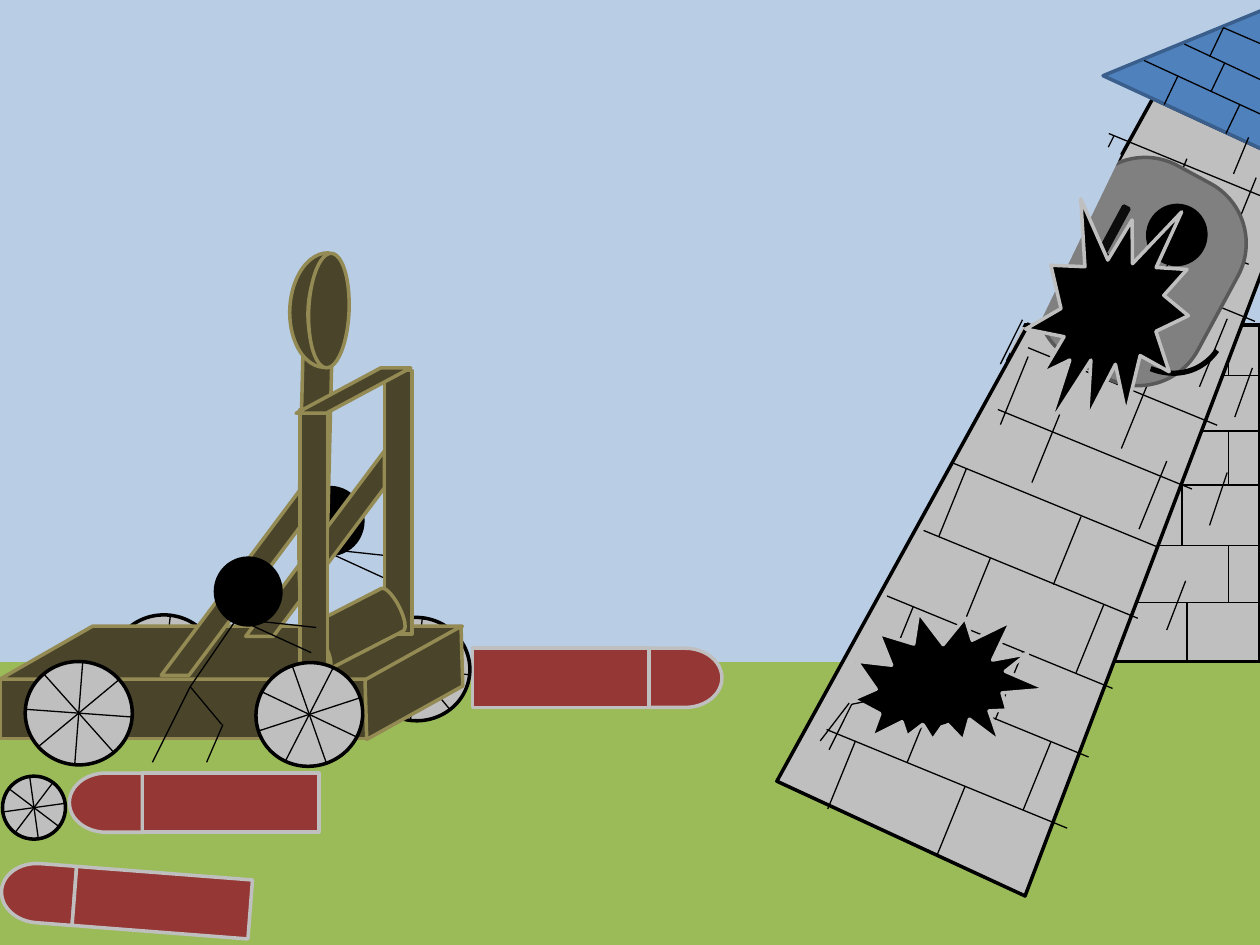
import math
from dataclasses import dataclass

import pptx
import pptx.dml.color
import pptx.enum.shapes
import pptx.oxml
import pptx.slide
import pptx.util
from pptx.util import Inches

Kind = pptx.enum.shapes.MSO_SHAPE
RGB = pptx.dml.color.RGBColor

BLACK = RGB(0x00, 0x00, 0x00)
INK = RGB(0x0D, 0x0D, 0x0D)
GRASS = RGB(0x9B, 0xBB, 0x59)
SKY = RGB(0xB9, 0xCD, 0xE5)
STONE = RGB(0xBF, 0xBF, 0xBF)
WOOD = RGB(0x4A, 0x45, 0x2A)
WOOD_EDGE = RGB(0x94, 0x8A, 0x54)
ROCKET_RED = RGB(0x95, 0x37, 0x35)
ROOF = RGB(0x4F, 0x81, 0xBD)
ROOF_EDGE = RGB(0x3A, 0x5F, 0x8C)
BOULDER = RGB(0x80, 0x80, 0x80)
BOULDER_EDGE = RGB(0x59, 0x59, 0x59)

COURSE_SLOPE = 0.41
BRICK_JOINT = (-0.22, 0.54)
TILE_JOINT = (-0.11, 0.23)


@dataclass(frozen=True)
class Box:
    left: float
    top: float
    width: float
    height: float
    angle: float = 0


def draw(slide: pptx.slide.Slide, kind: Kind, box: Box, fill: RGB | None, edge: RGB,
         adjust: tuple[float, ...] = (), weight: float = 2) -> None:
    part = slide.shapes.add_shape(kind, Inches(box.left), Inches(box.top),
                                  Inches(box.width), Inches(box.height))
    part.rotation = box.angle
    part.shadow.inherit = False
    if fill is None:
        part.fill.background()
    else:
        part.fill.solid()
        part.fill.fore_color.rgb = fill
    part.line.color.rgb = edge
    part.line.width = pptx.util.Pt(weight)
    for index, value in enumerate(adjust):
        part.adjustments[index] = value


def wood(slide: pptx.slide.Slide, kind: Kind, box: Box, *adjust: float) -> None:
    draw(slide, kind, box, WOOD, WOOD_EDGE, adjust)


def stroke(slide: pptx.slide.Slide, x1: float, y1: float, x2: float, y2: float) -> None:
    line = slide.shapes.add_connector(pptx.enum.shapes.MSO_CONNECTOR.STRAIGHT,
                                      Inches(x1), Inches(y1), Inches(x2), Inches(y2))
    line.line.color.rgb = BLACK
    line.line.width = pptx.util.Pt(0.75)
    properties = line._element.spPr
    properties.append(pptx.oxml.parse_xml(
        '<a:effectLst xmlns:a="http://schemas.openxmlformats.org/drawingml/2006/main"/>'))


def strokes(slide: pptx.slide.Slide, ends: list[tuple[float, float, float, float]]) -> None:
    for end in ends:
        stroke(slide, *end)


def joints(slide: pptx.slide.Slide, starts: list[tuple[float, float]],
           step: tuple[float, float]) -> None:
    """Draw equal parallel lines from each start."""
    for x, y in starts:
        stroke(slide, x, y, x + step[0], y + step[1])


def courses(slide: pptx.slide.Slide, rows: list[tuple[float, float, float]]) -> None:
    """Draw the sloping mortar rows, each given as x, y and horizontal run."""
    for x, y, run in rows:
        stroke(slide, x, y, x + run, y + run * COURSE_SLOPE)


def wheel(slide: pptx.slide.Slide, box: Box) -> None:
    draw(slide, Kind.OVAL, box, STONE, BLACK)
    rx, ry = box.width / 2, box.height / 2
    cx, cy = box.left + rx, box.top + ry
    for spoke in range(4):
        turn = math.radians(box.angle + 45 * spoke)
        dx, dy = rx * math.cos(turn), ry * math.sin(turn)
        stroke(slide, cx - dx, cy - dy, cx + dx, cy + dy)


def rocket(slide: pptx.slide.Slide, x: float, y: float, angle: float) -> None:
    """Draw a rocket whose nose meets its body at x, y."""
    turn = math.radians(angle)
    height = 0.47
    for kind, width, side in ((Kind.FLOWCHART_DELAY, 0.58, 1), (Kind.RECTANGLE, 1.4, -1)):
        cx = x + side * width / 2 * math.cos(turn)
        cy = y + side * width / 2 * math.sin(turn)
        draw(slide, kind, Box(cx - width / 2, cy - height / 2, width, height, angle),
             ROCKET_RED, STONE)


def soldier(slide: pptx.slide.Slide, x: float, y: float) -> None:
    """Draw a stick figure whose hip is at x, y."""
    limbs = [(0, 0, -0.3, 0.6), (0, 0, 0.25, 0.3), (0.26, 0.3, 0.13, 0.6),
             (0, 0, 0.37, -0.54), (0.37, -0.54, 0.96, -0.27), (0.35, -0.54, 1, -0.47)]
    strokes(slide, [(x + a, y + b, x + c, y + d) for a, b, c, d in limbs])
    draw(slide, Kind.OVAL, Box(x + 0.2, y - 1.02, 0.52, 0.53), BLACK, BLACK)


def upright(slide: pptx.slide.Slide, x: float, y: float) -> None:
    """Draw a post with its top left at x, y, and the brace behind it."""
    wood(slide, Kind.DIAGONAL_STRIPE, Box(x - 1.1, y + 0.64, 1.1, 1.47, 180), 0.801)
    wood(slide, Kind.FLOWCHART_PROCESS, Box(x, y, 0.22, 2.09))


def landscape(slide: pptx.slide.Slide) -> None:
    draw(slide, Kind.RECTANGLE, Box(0, 5.25, 10, 2.25), GRASS, GRASS)
    draw(slide, Kind.RECTANGLE, Box(0.01, -0.01, 10, 5.25), SKY, SKY)


def wall(slide: pptx.slide.Slide) -> None:
    draw(slide, Kind.FLOWCHART_PROCESS, Box(8, 2.58, 2, 2.67), STONE, BLACK)
    rows = [2.58, 2.98, 3.42, 3.85, 4.33, 4.78, 5.25]
    for y in rows[1:-1]:
        stroke(slide, 8.7, y, 10, y)
    for index, (top, bottom) in enumerate(zip(rows, rows[1:])):
        x = 9.42 if bottom == rows[-1] else (9.75, 9.38)[index % 2]
        stroke(slide, x, top, x, bottom)


def catapult(slide: pptx.slide.Slide) -> None:
    soldier(slide, 2.16, 4.89)
    wheel(slide, Box(2.88, 4.9, 0.85, 0.82, 186.4))
    wheel(slide, Box(0.88, 4.88, 0.85, 0.82, 186.4))
    wood(slide, Kind.FLOWCHART_PROCESS, Box(0, 5.39, 2.92, 0.47))
    wood(slide, Kind.FLOWCHART_DATA, Box(0, 4.97, 3.67, 0.42))
    wood(slide, Kind.FLOWCHART_DATA, Box(2.74, 5.21, 1.09, 0.42, 150.9))
    upright(slide, 3.05, 2.94)
    wheel(slide, Box(0.2, 5.25, 0.85, 0.82, 184.3))
    wood(slide, Kind.FLOWCHART_DELAY, Box(1.32, 3.88, 2.34, 0.23, 91.4))
    wood(slide, Kind.MOON, Box(2.3, 2, 0.29, 0.91, 2.5))
    wood(slide, Kind.OVAL, Box(2.45, 2.01, 0.32, 0.91, 2.5))
    wood(slide, Kind.CAN, Box(2.63, 4.6, 0.38, 0.78, 242.8), 0.311)
    upright(slide, 2.38, 3.25)
    wheel(slide, Box(2.03, 5.26, 0.85, 0.82, 161.3))
    soldier(slide, 1.51, 5.45)
    wood(slide, Kind.PARALLELOGRAM, Box(2.35, 2.92, 0.91, 0.36), 1.865)


def tower(slide: pptx.slide.Slide) -> None:
    draw(slide, Kind.FLOWCHART_MANUAL_OPERATION, Box(7.36, 0.77, 2.17, 6.17, 204.8),
         STONE, BLACK)
    draw(slide, Kind.FLOWCHART_EXTRACT, Box(8.9, -0.06, 2.17, 1.17, 24.8), ROOF, ROOF_EDGE)
    strokes(slide, [(9.08, 0.48, 10.6, 1.18), (9.4, 0.35, 10.49, 0.86),
                    (9.71, 0.22, 10.36, 0.5)])
    joints(slide, [(9.35, 0.6), (9.84, 0.83), (9.72, 0.5), (9.71, 0.22)], TILE_JOINT)
    courses(slide, [(6.56, 5.79, 1.91), (6.79, 5.25, 1.85), (7.04, 4.73, 1.79),
                    (7.33, 4.21, 1.7), (7.55, 3.67, 1.63), (7.92, 3.25, 1.54),
                    (8.8, 1.06, 1.2)])
    draw(slide, Kind.RECTANGLE, Box(8.08, 0.93, 0.33, 2, 26.4), SKY, SKY)
    stroke(slide, 7.94, 2.89, 8.84, 1.08)
    courses(slide, [(8.16, 2.76, 1.5), (8.52, 1.96, 1.44), (8.72, 1.61, 1.19)])
    joints(slide, [(6.79, 5.88), (7.66, 6.24), (8.34, 5.89), (8.12, 5.17), (8.76, 4.8),
                   (8.58, 4.1), (9.26, 3.66), (9.12, 3.02), (9.74, 2.53), (9.46, 1.93),
                   (9.97, 1.41), (7.42, 5.51), (7.25, 4.81), (7.86, 4.43), (7.67, 3.72),
                   (8.41, 3.29), (8.16, 2.83), (9.42, 1.26)], BRICK_JOINT)
    stroke(slide, 9.91, 1.09, 9.79, 1.38)


def tower_damage(slide: pptx.slide.Slide) -> None:
    draw(slide, Kind.ROUNDED_RECTANGLE, Box(8.37, 1.28, 1.38, 1.75, 28.4),
         BOULDER, BOULDER_EDGE, (0.392,))
    draw(slide, Kind.MATH_PLUS, Box(8.59, 1.44, 0.29, 1.17, 28.4), INK, INK, (0.163,))
    strokes(slide, [(8.7, 2.8, 9.03, 2.5), (9, 2.96, 9.05, 2.52), (9.05, 2.5, 9.29, 2.06),
                    (9.41, 4.61, 9.26, 5), (9.74, 3.75, 9.6, 4.17), (9.94, 2.92, 9.8, 3.31),
                    (8.75, 2.19, 9.15, 2.1), (9.18, 2.09, 9.22, 2.41)])
    draw(slide, Kind.FLOWCHART_CONNECTOR, Box(9.11, 1.63, 0.46, 0.47, 22.3), BLACK, BLACK)
    draw(slide, Kind.RECTANGLE, Box(8.11, 1.05, 0.47, 1.5, 25.8), SKY, SKY)
    arc_ends = tuple(degrees * 0.6 for degrees in (158.8, 215.58))
    draw(slide, Kind.ARC, Box(8.63, 1.88, 1.21, 0.99, 245), None, BLACK, arc_ends, 3)
    stroke(slide, 8.88, 2.25, 9.22, 2.41)
    draw(slide, Kind.EXPLOSION2, Box(6.79, 4.78, 1.48, 1.27, 22.3), BLACK, STONE)
    strokes(slide, [(8.97, 1.83, 8.88, 2.25), (8.91, 2.2, 8.8, 2.63)])
    draw(slide, Kind.OVAL, Box(7.16, 5.25, 0.52, 0.47, 85.9), BLACK, BLACK)
    strokes(slide, [(7.19, 5.5, 6.76, 5.59), (6.74, 5.58, 6.51, 5.88),
                    (6.76, 5.59, 6.58, 5.95)])
    draw(slide, Kind.EXPLOSION1, Box(8.22, 1.53, 1.19, 1.97, 22.3), BLACK, STONE)


def main() -> None:
    deck = pptx.Presentation()
    deck.slide_width, deck.slide_height = Inches(10), Inches(7.5)
    slide = deck.slides.add_slide(deck.slide_layouts[6])
    landscape(slide)
    wall(slide)
    rocket(slide, 1.13, 6.37, 180)
    wheel(slide, Box(0.02, 6.16, 0.5, 0.5, 352.1))
    rocket(slide, 0.59, 7.11, 184.4)
    rocket(slide, 5.15, 5.38, 0)
    catapult(slide)
    tower(slide)
    tower_damage(slide)
    deck.save("out.pptx")


if __name__ == "__main__":
    main()
